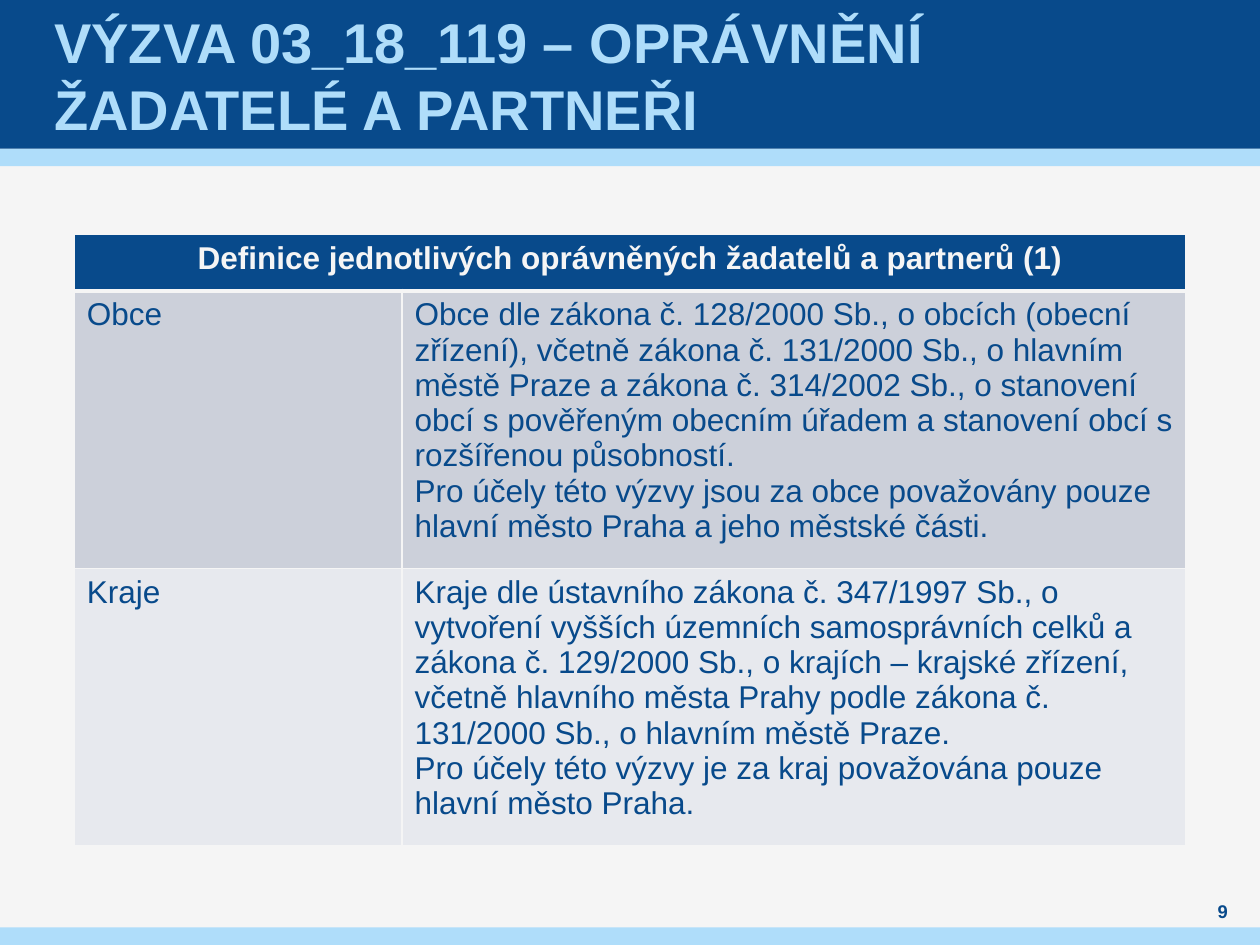
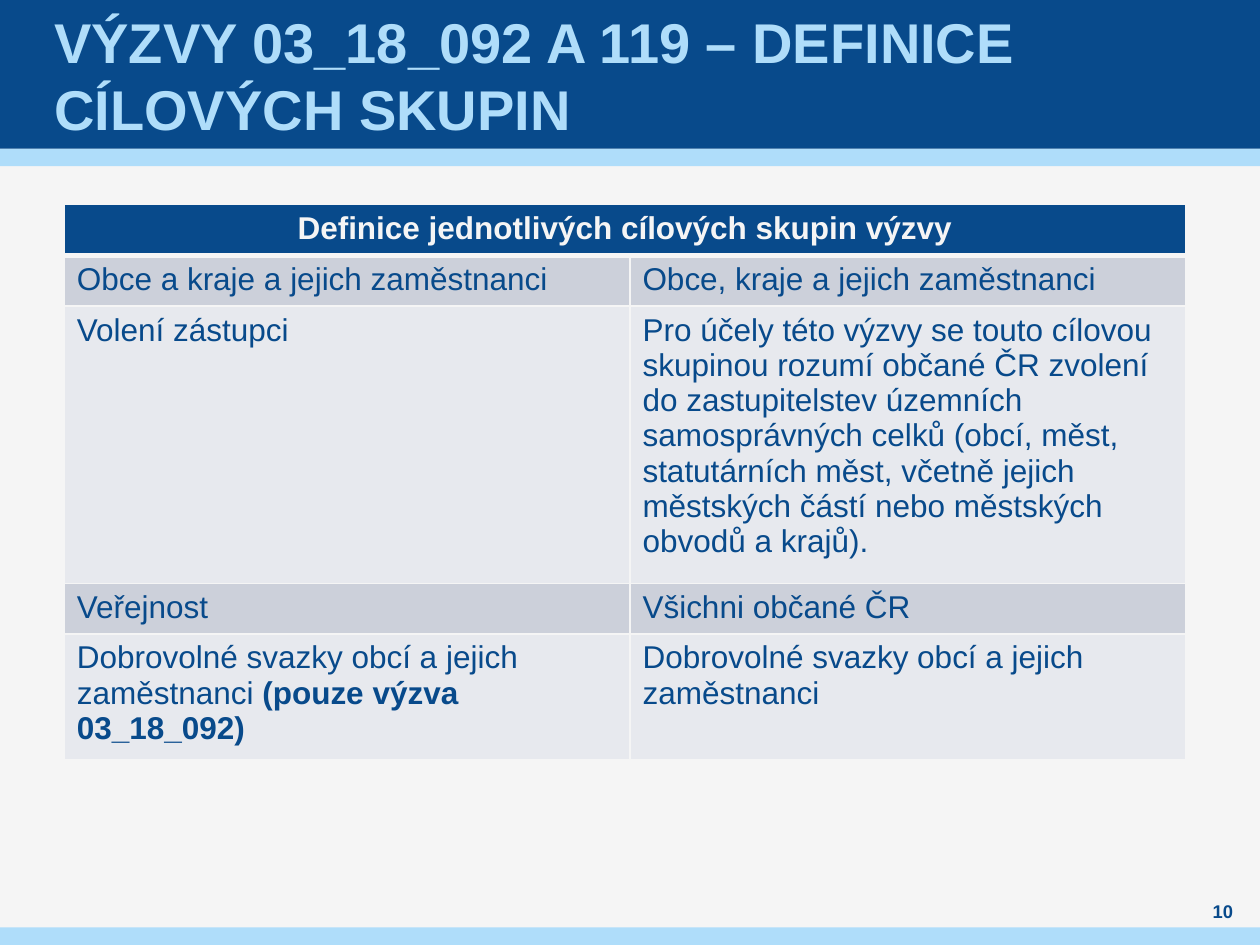
import pptx
import pptx.util
import pptx.dml.color
import pptx.enum.shapes
import pptx.enum.text
import pptx.oxml
import pptx.oxml.ns

RGBColor = pptx.dml.color.RGBColor
Inches = pptx.util.Inches
Pt = pptx.util.Pt
Align = pptx.enum.text.PP_ALIGN
Anchor = pptx.enum.text.MSO_ANCHOR

SLIDES = [
    {
        "title": "VÝZVA 03_18_119 – OPRÁVNĚNÍ ŽADATELÉ A PARTNEŘI",
        "number": "9",
        "heading": "Definice jednotlivých oprávněných žadatelů a partnerů (1)",
        "left": 0.59, "top": 1.86,
        "columns": [2.6, 6.22],
        "heights": [0.45, 2.06, 2.06],
        "rows": [
            ("Obce",
             "Obce dle zákona č. 128/2000 Sb., o obcích (obecní zřízení), včetně zákona "
             "č. 131/2000 Sb., o hlavním městě Praze a zákona č. 314/2002 Sb., o stanovení "
             "obcí s pověřeným obecním úřadem a stanovení obcí s rozšířenou působností.\n"
             "Pro účely této výzvy jsou za obce považovány pouze hlavní město Praha "
             "a jeho městské části."),
            ("Kraje",
             "Kraje dle ústavního zákona č. 347/1997 Sb., o vytvoření vyšších územních "
             "samosprávních celků a zákona č. 129/2000 Sb., o krajích – krajské zřízení, "
             "včetně hlavního města Prahy podle zákona č. 131/2000 Sb., o hlavním městě Praze.\n"
             "Pro účely této výzvy je za kraj považována pouze hlavní město Praha."),
        ],
    },
    {
        "title": "VÝZVY 03_18_092 A 119 – DEFINICE CÍLOVÝCH SKUPIN",
        "number": "10",
        "heading": "Definice jednotlivých cílových skupin výzvy",
        "left": 0.51, "top": 1.62,
        "columns": [4.49, 4.41],
        "heights": [0.41, 0.4, 2.06, 0.4, 0.94],
        "rows": [
            ("Obce a kraje a jejich zaměstnanci", "Obce, kraje a jejich zaměstnanci"),
            ("Volení zástupci",
             "Pro účely této výzvy se touto cílovou skupinou rozumí občané ČR zvolení do "
             "zastupitelstev územních samosprávných celků (obcí, měst, statutárních měst, "
             "včetně jejich městských částí nebo městských obvodů a krajů)."),
            ("Veřejnost", "Všichni občané ČR"),
            ("Dobrovolné svazky obcí a jejich zaměstnanci **(pouze výzva 03_18_092)",
             "Dobrovolné svazky obcí a jejich zaměstnanci"),
        ],
    },
]

NAVY = RGBColor(0x08, 0x4A, 0x8B)
SKY = RGBColor(0xAF, 0xDD, 0xFA)
PAPER = RGBColor(0xF5, 0xF5, 0xF5)
ROW_FILLS = [RGBColor(0xCC, 0xD0, 0xDA), RGBColor(0xE7, 0xE9, 0xEE)]
FONT = "Arial"

WIDTH, HEIGHT = 10, 7.5
HEADER_HEIGHT, STRIPE_HEIGHT = 1.18, 0.14
BANDS = [
    (HEADER_HEIGHT, STRIPE_HEIGHT, SKY),
    (0, HEADER_HEIGHT, NAVY),
    (HEIGHT - STRIPE_HEIGHT, STRIPE_HEIGHT, SKY),
]


def write(frame, text, size=18, color=NAVY, bold=False, align=Align.LEFT):
    for index, line in enumerate(text.split("\n")):
        para = frame.add_paragraph() if index else frame.paragraphs[0]
        para.alignment = align
        for part, words in enumerate(line.split("**")):
            span = para.add_run()
            span.text = words
            span.font.name = FONT
            span.font.size = Pt(size)
            span.font.bold = bold or part % 2 == 1
            span.font.color.rgb = color


def add_band(page, top, height, color):
    band = page.shapes.add_shape(pptx.enum.shapes.MSO_SHAPE.RECTANGLE,
                                 0, Inches(top), Inches(WIDTH), Inches(height))
    band.shadow.inherit = False
    band.fill.solid()
    band.fill.fore_color.rgb = color
    band.line.fill.background()


def add_text(page, text, left, top, width, height, inset=0, **style):
    box = page.shapes.add_textbox(*map(Inches, (left, top, width, height)))
    frame = box.text_frame
    frame.word_wrap = True
    frame.vertical_anchor = Anchor.MIDDLE
    frame.margin_left = frame.margin_right = Inches(inset)
    frame.margin_top = frame.margin_bottom = 0
    write(frame, text, **style)


def style_cell(cell, fill, top=1, bottom=1):
    properties = cell._tc.get_or_add_tcPr()
    for side, points in (("L", 1), ("R", 1), ("T", top), ("B", bottom)):
        properties.append(pptx.oxml.parse_xml(
            f'<a:ln{side} {pptx.oxml.ns.nsdecls("a")} w="{Pt(points)}">'
            f'<a:solidFill><a:srgbClr val="{PAPER}"/></a:solidFill></a:ln{side}>'))
    cell.fill.solid()
    cell.fill.fore_color.rgb = fill


def add_definitions(page, content):
    columns, heights = content["columns"], content["heights"]
    table = page.shapes.add_table(
        len(heights), len(columns), Inches(content["left"]), Inches(content["top"]),
        Inches(sum(columns)), Inches(sum(heights))).table
    for column, width in zip(table.columns, columns):
        column.width = Inches(width)
    for row, height in zip(table.rows, heights):
        row.height = Inches(height)
    for cell in table.rows[0].cells:
        style_cell(cell, NAVY, bottom=3)
    heading = table.cell(0, 0)
    heading.merge(table.cell(0, len(columns) - 1))
    write(heading.text_frame, content["heading"], color=PAPER, bold=True, align=Align.CENTER)
    for index, texts in enumerate(content["rows"]):
        for cell, text in zip(table.rows[index + 1].cells, texts):
            style_cell(cell, ROW_FILLS[index % 2], top=1 if index else 3)
            write(cell.text_frame, text)


def add_page(deck, content):
    page = deck.slides.add_slide(deck.slide_layouts[6])
    page.background.fill.solid()
    page.background.fill.fore_color.rgb = PAPER
    for band in BANDS:
        add_band(page, *band)
    add_text(page, content["title"], 0.39, 0, 9.21, HEADER_HEIGHT,
             inset=0.04, size=32, color=SKY, bold=True)
    add_definitions(page, content)
    add_text(page, content["number"], 9.45, 7.13, 0.51, 0.2,
             size=10.5, bold=True, align=Align.CENTER)


def main():
    deck = pptx.Presentation()
    deck.slide_width, deck.slide_height = Inches(WIDTH), Inches(HEIGHT)
    for content in SLIDES:
        add_page(deck, content)
    deck.save("out.pptx")


if __name__ == "__main__":
    main()
